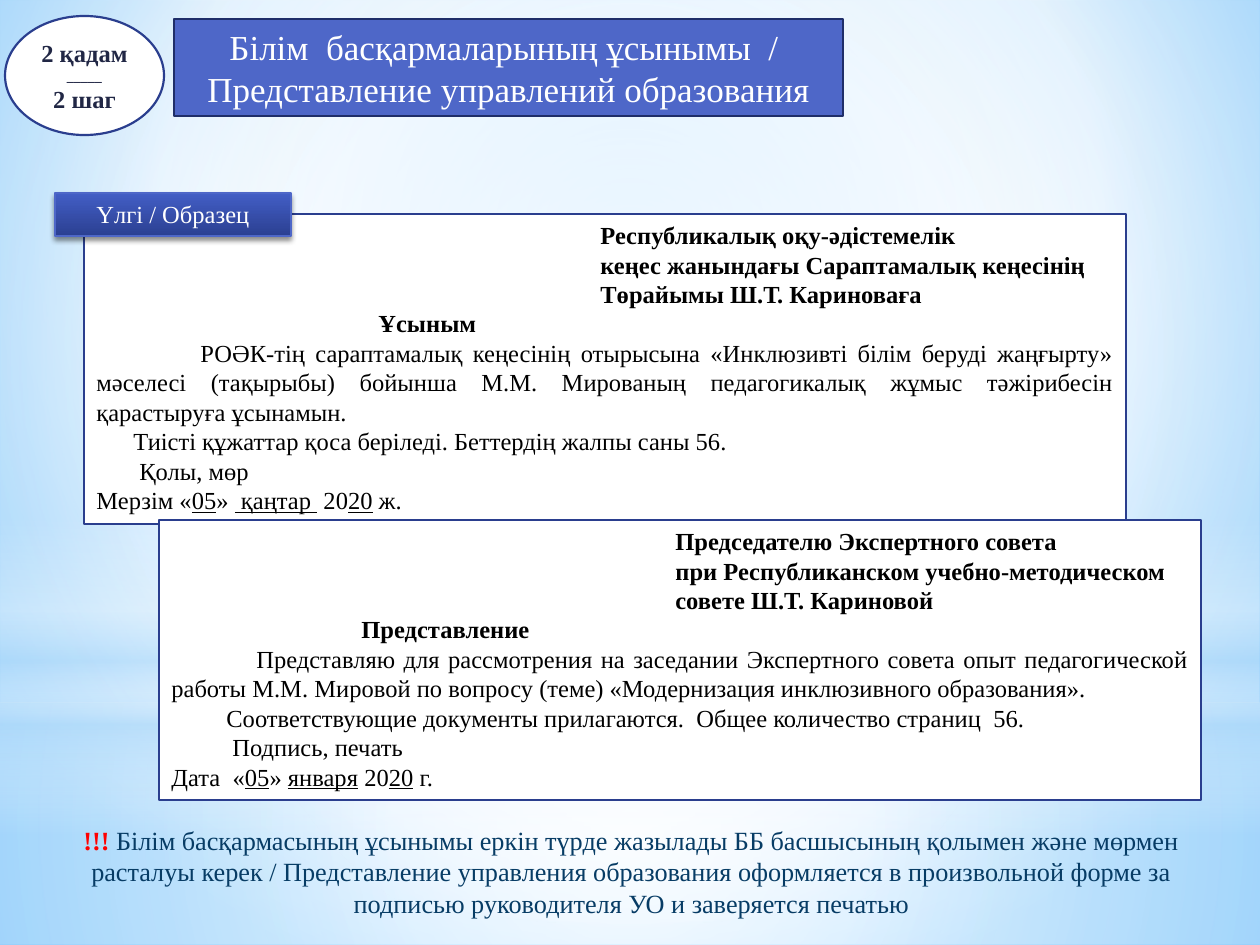
import dataclasses

import pptx
import pptx.dml.color
import pptx.enum.shapes
import pptx.enum.text
import pptx.oxml
import pptx.oxml.ns
import pptx.util

SCALE = 914400 / 126
FONT = "Times New Roman"
ALIGN = pptx.enum.text.PP_ALIGN
SHAPE = pptx.enum.shapes.MSO_SHAPE
NAMESPACE = pptx.oxml.ns.nsdecls("a")


def px(length):
    """Turn pixels into EMU."""
    return pptx.util.Emu(round(length * SCALE))


def color(value):
    """Turn a hex string into a colour."""
    return pptx.dml.color.RGBColor.from_string(value)


def gradient(stops, center=None):
    """Return a gradient fill: circular around center, else top to bottom."""
    stop_xml = "".join(
        f'<a:gs pos="{position * 1000}"><a:srgbClr val="{value}">'
        f'<a:alpha val="{alpha * 1000}"/></a:srgbClr></a:gs>'
        for position, value, alpha in stops)
    if center:
        sides = " ".join(f'{side}="{share * 1000}"' for side, share in zip("ltrb", center))
        direction = f'<a:path path="circle"><a:fillToRect {sides}/></a:path>'
    else:
        direction = '<a:lin ang="5400000" scaled="0"/>'
    return pptx.oxml.parse_xml(
        f'<a:gradFill {NAMESPACE} rotWithShape="1"><a:gsLst>{stop_xml}</a:gsLst>{direction}</a:gradFill>')


@dataclasses.dataclass
class Line:
    """One paragraph; parts between bars are underlined."""
    text: str
    size: int = 14
    bold: bool = False
    indent: int = 0
    margin: int = 0
    align: ALIGN = ALIGN.JUSTIFY


class Deck:
    """Style and current slide, with a method for each kind of element."""

    def __init__(self):
        """Open a presentation with one blank slide."""
        self.presentation = pptx.Presentation()
        self.presentation.slide_width = px(1260)
        self.presentation.slide_height = px(945)
        self.slide = self.presentation.slides.add_slide(self.presentation.slide_layouts[6])

    def swap_fill(self, fill, parent, stops, center=None):
        """Set a gradient as the fill below parent."""
        fill.solid()
        solid = parent.find(".//" + pptx.oxml.ns.qn("a:solidFill"))
        solid.getparent().replace(solid, gradient(stops, center))

    def background(self, stops, center):
        """Fill the slide background with a gradient."""
        self.swap_fill(self.slide.background.fill, self.slide.element, stops, center)

    def shape(self, kind, box, fill=None, line=None, width=1.25):
        """Add a preset shape with a plain fill and outline."""
        shape = self.slide.shapes.add_shape(kind, *map(px, box))
        shape.shadow.inherit = False
        if fill:
            shape.fill.solid()
            shape.fill.fore_color.rgb = color(fill)
        if line:
            shape.line.color.rgb = color(line)
            shape.line.width = pptx.util.Pt(width)
        else:
            shape.line.fill.background()
        return shape

    def glow(self, kind, box, stops, center=None):
        """Add a gradient shape without outline."""
        shape = self.shape(kind, box)
        self.swap_fill(shape.fill, shape.element.spPr, stops, center)

    def label(self, box, stops, line, lines):
        """Add a raised gradient label."""
        shape = self.shape(SHAPE.RECTANGLE, box, line=line, width=0.75)
        properties = shape.element.spPr
        self.swap_fill(shape.fill, properties, stops)
        effects = properties.find(pptx.oxml.ns.qn("a:effectLst"))
        effects.append(pptx.oxml.parse_xml(
            f'<a:outerShdw {NAMESPACE} blurRad="39370" dist="22860" dir="5400000" rotWithShape="0">'
            '<a:srgbClr val="000000"><a:alpha val="45000"/></a:srgbClr></a:outerShdw>'))
        self.put_text(shape, lines, "FFFFFF")

    def text_box(self, box, lines, text_color):
        """Add a text box."""
        shape = self.slide.shapes.add_textbox(*map(px, box))
        return self.put_text(shape, lines, text_color)

    def put_text(self, shape, lines, text_color, anchor=pptx.enum.text.MSO_ANCHOR.TOP):
        """Put paragraphs into a shape."""
        frame = shape.text_frame
        frame.word_wrap = True
        frame.vertical_anchor = anchor
        for number, line in enumerate(lines):
            paragraph = frame.add_paragraph() if number else frame.paragraphs[0]
            paragraph.alignment = line.align
            paragraph.font.name = FONT
            paragraph.font.size = pptx.util.Pt(line.size)
            paragraph.font.bold = line.bold
            paragraph.font.color.rgb = color(text_color)
            properties = paragraph._p.get_or_add_pPr()
            properties.set("marL", str(px(line.margin)))
            properties.set("indent", str(px(line.indent)))
            for index, part in enumerate(line.text.split("|")):
                run = paragraph.add_run()
                run.text = part
                if index % 2:
                    run.font.underline = True
        return shape


def addressee(*texts):
    """Return the bold lines at the right of a letter."""
    return [Line(text, bold=True, margin=504) for text in texts]


def centered(text, size=14, bold=False):
    """Return a centred line."""
    return Line(text, size, bold, align=ALIGN.CENTER)


def main():
    """Build the slide."""
    deck = Deck()
    middle = (50, 50, 50, 50)
    deck.background([(0, "9ED5FF", 100), (60, "FFFFFF", 100), (100, "5BB9FF", 100)], (20, 10, 20, 60))
    deck.glow(SHAPE.RECTANGLE, (0, 703, 1260, 242),
              [(0, "FFFFFF", 91), (37, "FFFFFF", 76), (100, "B4DCFA", 79)], middle)
    deck.glow(SHAPE.RECTANGLE, (0, 0, 1260, 703),
              [(0, "FFFFFF", 89), (48, "FFFFFF", 62), (100, "B4DCFA", 79)], middle)
    deck.glow(SHAPE.RECTANGLE, (0, 519, 1260, 315),
              [(0, "FFFFFF", 0), (29, "FFFFFF", 30), (45, "B4DCFA", 40),
               (55, "FFFFFF", 26), (65, "B4DCFA", 60), (100, "FFFFFF", 0)])
    deck.glow(SHAPE.OVAL, (0, 220, 1260, 703), [(0, "FFFFFF", 100), (56, "FFFFFF", 0)], middle)

    step = deck.shape(SHAPE.OVAL, (5, 16, 159, 119), "FFFFFF", "2A3E8E")
    deck.put_text(step, [centered("2 қадам", bold=True), centered("_____", 8, True),
                         centered("2 шаг", bold=True)], "212745", pptx.enum.text.MSO_ANCHOR.MIDDLE)
    title = deck.shape(SHAPE.RECTANGLE, (174, 19, 669, 97), "4E67C8", "1F2E69")
    deck.put_text(title, [centered("Білім  басқармаларының ұсынымы  / ", 20),
                          centered("Представление управлений образования", 20)], "FFFFFF")

    kazakh = addressee("Республикалық оқу-әдістемелік",
                       "кеңес жанындағы Сараптамалық кеңесінің",
                       "Төрайымы Ш.Т. Кариноваға") + [
        Line("Ұсыным", bold=True, indent=282),
        Line("РОӘК-тің сараптамалық кеңесінің отырысына «Инклюзивті білім беруді жаңғырту» "
             "мәселесі (тақырыбы) бойынша М.М. Мированың педагогикалық жұмыс тәжірибесін "
             "қарастыруға ұсынамын.", indent=104),
        Line("Тиісті құжаттар қоса беріледі. Беттердің жалпы саны 56.", indent=37),
        Line("Қолы, мөр", indent=43),
        Line("Мерзім «|05|» | қаңтар | 20|20| ж.")]
    russian = addressee("Председателю Экспертного совета",
                        "при Республиканском учебно-методическом",
                        "совете Ш.Т. Кариновой") + [
        Line("Представление", bold=True, indent=190),
        Line("Представляю для рассмотрения на заседании Экспертного совета опыт педагогической "
             "работы М.М. Мировой по вопросу (теме) «Модернизация инклюзивного образования».",
             indent=85),
        Line("Соответствующие документы прилагаются.  Общее количество страниц  56.",
             indent=55, align=ALIGN.LEFT),
        Line("Подпись, печать", indent=61, align=ALIGN.LEFT),
        Line("Дата  «|05|» |января| 20|20| г.", align=ALIGN.LEFT)]
    for box, letter in (((84, 214, 1042, 310), kazakh), ((159, 520, 1042, 280), russian)):
        deck.put_text(deck.shape(SHAPE.RECTANGLE, box, "FFFFFF", "2A3E8E"), letter, "000000")

    note = deck.text_box((21, 818, 1221, 108), [centered("!!!", 15)], "073C65")
    paragraph = note.text_frame.paragraphs[0]
    marks = paragraph.runs[0].font
    marks.bold = True
    marks.color.rgb = color("FF0000")
    paragraph.add_run().text = (
        " Білім басқармасының ұсынымы еркін түрде жазылады ББ басшысының қолымен және мөрмен "
        "расталуы керек / Представление управления образования оформляется в произвольной форме "
        "за подписью руководителя УО и заверяется печатью")
    deck.label((55, 193, 236, 43), [(0, "435EC5", 100), (100, "2B4092", 100)], "4E67C8",
               [centered("Үлгі / Образец")])
    deck.presentation.save("out.pptx")


if __name__ == "__main__":
    main()
